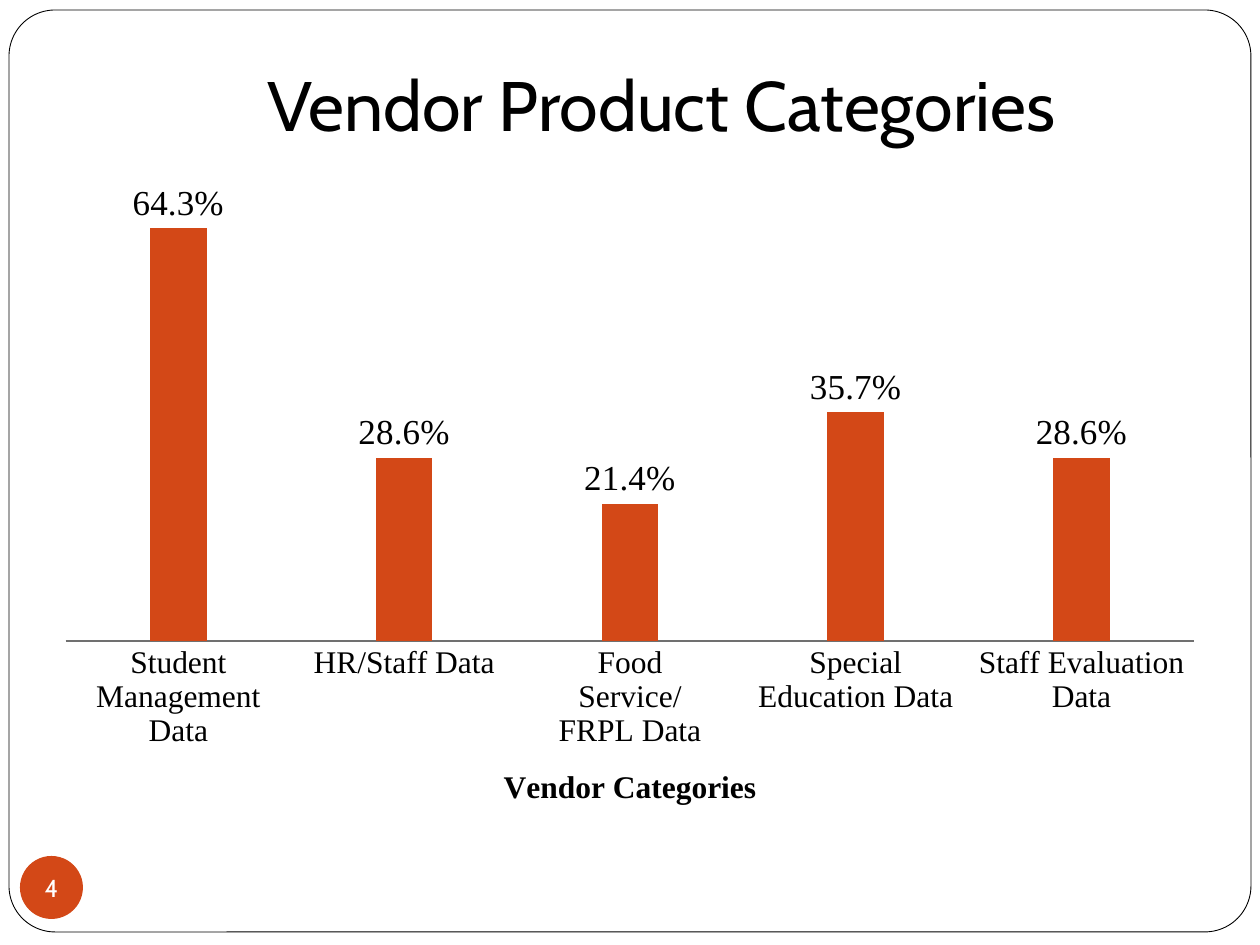
from lxml import etree
from pptx import Presentation
from pptx.chart.data import CategoryChartData
from pptx.dml.color import RGBColor
from pptx.enum.chart import XL_CHART_TYPE as ChartType
from pptx.enum.chart import XL_LABEL_POSITION as LabelPosition
from pptx.enum.chart import XL_TICK_LABEL_POSITION as TickLabels
from pptx.enum.chart import XL_TICK_MARK as TickMark
from pptx.enum.shapes import MSO_SHAPE as Preset
from pptx.enum.text import MSO_ANCHOR as Anchor
from pptx.enum.text import PP_ALIGN as Align
from pptx.oxml.ns import qn
from pptx.util import Emu, Pt

EMU_PER_PX = 914400 / 126
BLACK = RGBColor(0x00, 0x00, 0x00)
WHITE = RGBColor(0xFF, 0xFF, 0xFF)
GREY = RGBColor(0x70, 0x70, 0x70)
ORANGE = RGBColor(0xD3, 0x48, 0x17)
HEADING_FONT = "Cabin"
CHART_FONT = "Times New Roman"

VENDOR_SHARES = {
    "Student Management Data": 0.643,
    "HR/Staff Data": 0.286,
    "Food Service/FRPL Data": 0.214,
    "Special Education Data": 0.357,
    "Staff Evaluation Data": 0.286,
}
PLOT_AREA = {"x": 0.02, "y": 0.02, "w": 0.96, "h": 0.69}


def px(length):
    return Emu(round(length * EMU_PER_PX))


def box(*lengths):
    return [px(length) for length in lengths]


def set_values(target, values):
    for name, value in values.items():
        setattr(target, name, value)


def set_font(font, name, size, color, bold=False):
    set_values(font, {"name": name, "size": Pt(size), "bold": bold})
    font.color.rgb = color


def write_text(shape, text, size, color, frame_format):
    frame = shape.text_frame
    set_values(frame, frame_format)
    paragraph = frame.paragraphs[0]
    paragraph.alignment = Align.CENTER
    run = paragraph.add_run()
    run.text = text
    set_font(run.font, HEADING_FONT, size, color)


def add_preset(slide, preset, bounds, fill, line=None):
    shape = slide.shapes.add_shape(preset, *box(*bounds))
    shape.shadow.inherit = False
    shape.fill.solid()
    shape.fill.fore_color.rgb = fill
    if line is None:
        shape.line.fill.background()
    else:
        shape.line.color.rgb = line
        shape.line.width = Pt(0.5)
    return shape


def add_frame(slide):
    frame = add_preset(slide, Preset.ROUNDED_RECTANGLE, (9, 10, 1242, 922),
                       WHITE, BLACK)
    frame.adjustments[0] = 0.05


def add_title(slide, text):
    title = slide.shapes.add_textbox(*box(126, 38, 1071, 120))
    write_text(title, text, 40, BLACK, {
        "word_wrap": True, "vertical_anchor": Anchor.BOTTOM,
        "margin_bottom": px(13)})


def add_page_number(slide, number):
    badge = add_preset(slide, Preset.OVAL, (20, 856, 63, 63), ORANGE)
    write_text(badge, number, 14, WHITE, {
        "word_wrap": False, "vertical_anchor": Anchor.MIDDLE,
        "margin_left": 0, "margin_right": 0,
        "margin_top": 0, "margin_bottom": 0})


def fix_plot_area(chart, fractions):
    """Place the inner plot area by fractions of the chart's size."""
    plot_area = chart.plots[0]._element.getparent()
    layout = plot_area.find(qn("c:layout"))
    if layout is None:
        layout = etree.Element(qn("c:layout"))
        plot_area.insert(0, layout)
    manual = etree.SubElement(layout, qn("c:manualLayout"))
    settings = {"layoutTarget": "inner", "xMode": "edge", "yMode": "edge",
                **fractions}
    for name, value in settings.items():
        etree.SubElement(manual, qn(f"c:{name}"), val=str(value))


def format_axes(chart, category_title):
    set_values(chart.value_axis, {
        "visible": False, "has_major_gridlines": False,
        "minimum_scale": 0, "maximum_scale": 0.7})
    axis = chart.category_axis
    set_values(axis, {
        "major_tick_mark": TickMark.NONE, "minor_tick_mark": TickMark.NONE,
        "tick_label_position": TickLabels.NEXT_TO_AXIS})
    axis.format.line.color.rgb = GREY
    axis.format.line.width = Pt(0.75)
    set_font(axis.tick_labels.font, CHART_FONT, 18, BLACK)
    frame = axis.axis_title.text_frame
    frame.text = category_title
    set_font(frame.paragraphs[0].runs[0].font, CHART_FONT, 18, BLACK, True)


def format_columns(plot):
    set_values(plot, {"gap_width": 300, "vary_by_categories": False,
                      "has_data_labels": True})
    fill = plot.series[0].format.fill
    fill.solid()
    fill.fore_color.rgb = ORANGE
    set_values(plot.data_labels, {
        "show_value": True, "position": LabelPosition.OUTSIDE_END,
        "number_format": "0.0%", "number_format_is_linked": False})
    set_font(plot.data_labels.font, CHART_FONT, 20, BLACK)


def add_column_chart(slide, shares, category_title):
    data = CategoryChartData(number_format="0.0%")
    data.categories = list(shares)
    data.add_series("Series 1", list(shares.values()))
    chart = slide.shapes.add_chart(ChartType.COLUMN_CLUSTERED,
                                   *box(42, 179, 1176, 651), data).chart
    set_values(chart, {"has_legend": False, "has_title": False})
    set_font(chart.font, CHART_FONT, 18, BLACK)
    fix_plot_area(chart, PLOT_AREA)
    format_axes(chart, category_title)
    format_columns(chart.plots[0])


def main():
    presentation = Presentation()
    set_values(presentation, {"slide_width": px(1260),
                              "slide_height": px(945)})
    slide = presentation.slides.add_slide(presentation.slide_layouts[6])
    add_frame(slide)
    add_title(slide, "Vendor Product Categories")
    add_column_chart(slide, VENDOR_SHARES, "Vendor Categories")
    add_page_number(slide, "4")
    presentation.save("out.pptx")


if __name__ == "__main__":
    main()
